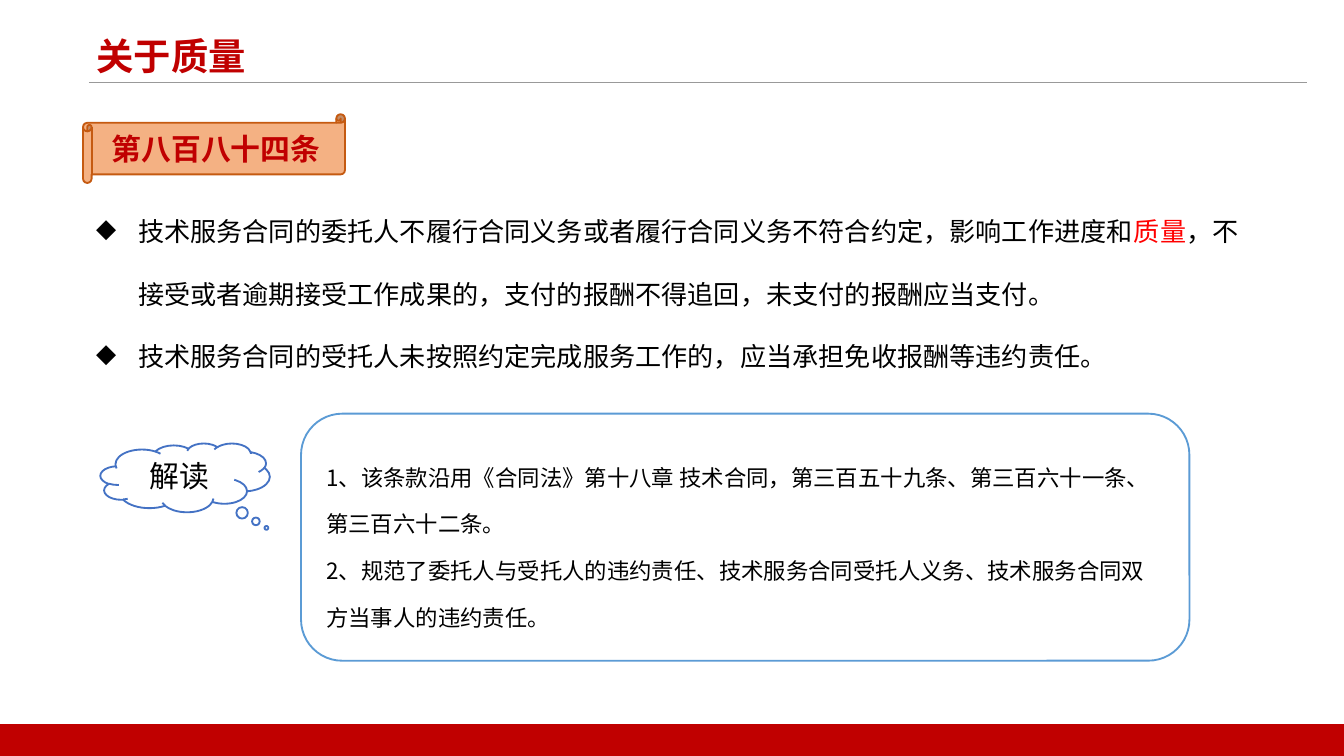
import pptx
import pptx.dml.color
import pptx.enum.shapes
import pptx.enum.text
import pptx.oxml.ns
import pptx.util
from lxml import etree
from pptx.util import Cm

SHAPE = pptx.enum.shapes.MSO_SHAPE
ALIGN = pptx.enum.text.PP_ALIGN
ANCHOR = pptx.enum.text.MSO_ANCHOR
qn = pptx.oxml.ns.qn

RED, BLACK, WHITE = "C00000", "000000", "FFFFFF"


def colour(value):
    return pptx.dml.color.RGBColor.from_string(value)


class SlideBuilder:
    font = "Noto Sans CJK SC"

    def __init__(self, deck):
        self.page = deck.slides.add_slide(deck.slide_layouts[6])
        fill = self.page.background.fill
        fill.solid()
        fill.fore_color.rgb = colour(WHITE)

    def add_span(self, para, text, size, ink=BLACK, bold=False):
        span = para.add_run()
        span.text = text
        span.font.size = pptx.util.Pt(size)
        span.font.bold = bold
        span.font.color.rgb = colour(ink)
        span.font.name = self.font
        latin = span.font._element.find(qn("a:latin"))
        east_asian = etree.Element(qn("a:ea"), typeface=self.font)
        latin.addnext(east_asian)

    def paragraphs(self, box, count):
        """Return the first count paragraphs, adding those that are missing."""
        frame = box.text_frame
        while len(frame.paragraphs) < count:
            frame.add_paragraph()
        return frame.paragraphs

    def text_box(self, left, top, width, height):
        box = self.page.shapes.add_textbox(Cm(left), Cm(top), Cm(width), Cm(height))
        box.text_frame.word_wrap = True
        return box

    def shape(self, kind, left, top, width, height, fill=None, line=None):
        shape = self.page.shapes.add_shape(kind, Cm(left), Cm(top), Cm(width), Cm(height))
        shape.shadow.inherit = False
        if fill:
            shape.fill.solid()
            shape.fill.fore_color.rgb = colour(fill)
        else:
            shape.fill.background()
        if line:
            shape.line.color.rgb = colour(line)
            shape.line.width = pptx.util.Pt(1)
        else:
            shape.line.fill.background()
        shape.text_frame.word_wrap = True
        shape.text_frame.vertical_anchor = ANCHOR.MIDDLE
        return shape

    def label(self, shape, text, size, ink=BLACK, bold=False):
        para = shape.text_frame.paragraphs[0]
        para.alignment = ALIGN.CENTER
        self.add_span(para, text, size, ink, bold)

    def rule(self, left, right, top, ink):
        line = self.page.shapes.add_connector(
            pptx.enum.shapes.MSO_CONNECTOR.STRAIGHT, Cm(left), Cm(top), Cm(right), Cm(top))
        line.line.color.rgb = colour(ink)
        line.line.width = pptx.util.Pt(0.5)
        etree.SubElement(line._element.spPr, qn("a:effectLst"))

    def bullet(self, para, indent):
        properties = para._p.get_or_add_pPr()
        properties.set("marL", str(Cm(indent)))
        properties.set("indent", str(-Cm(indent)))
        etree.SubElement(properties, qn("a:buChar"), char="◆")


def main():
    deck = pptx.Presentation()
    deck.slide_width, deck.slide_height = Cm(25.4), Cm(14.29)
    slide = SlideBuilder(deck)

    slide.rule(1.68, 24.71, 1.55, "999999")
    title = slide.text_box(1.57, 0.51, 8.26, 1.3)
    slide.add_span(title.text_frame.paragraphs[0], "关于质量", 20, RED, True)
    slide.shape(SHAPE.RECTANGLE, 0, 13.69, 25.4, 0.6, RED)

    scroll = slide.shape(SHAPE.HORIZONTAL_SCROLL, 1.57, 2.16, 4.95, 1.3, "F4B183", "C55A11")
    slide.label(scroll, "第八百八十四条", 16, RED, True)

    clauses = [
        [("技术服务合同的委托人不履行合同义务或者履行合同义务不符合约定，影响工作进度和", BLACK),
         ("质量", "FF0000"),
         ("，不接受或者逾期接受工作成果的，支付的报酬不得追回，未支付的报酬应当支付。", BLACK)],
        [("技术服务合同的受托人未按照约定完成服务工作的，应当承担免收报酬等违约责任。", BLACK)],
    ]
    body = slide.text_box(1.57, 3.35, 22.4, 3.63)
    for para, clause in zip(slide.paragraphs(body, len(clauses)), clauses):
        para.line_spacing = 2.0
        slide.bullet(para, 0.79)
        for text, ink in clause:
            slide.add_span(para, text, 14, ink)

    cloud = slide.shape(SHAPE.CLOUD_CALLOUT, 1.9, 8.38, 3.2, 1.3, WHITE, "4472C4")
    cloud.adjustments[0], cloud.adjustments[1] = 0.48, 0.73
    slide.label(cloud, "解读", 16)

    notes = [
        "1、该条款沿用《合同法》第十八章 技术合同，第三百五十九条、第三百六十一条、第三百六十二条。",
        "2、规范了委托人与受托人的违约责任、技术服务合同受托人义务、技术服务合同双方当事人的违约责任。",
    ]
    panel = slide.shape(SHAPE.ROUNDED_RECTANGLE, 5.69, 7.82, 16.79, 4.67, line="5B9BD5")
    for para, note in zip(slide.paragraphs(panel, len(notes)), notes):
        para.alignment = ALIGN.LEFT
        para.line_spacing = pptx.util.Pt(25)
        slide.add_span(para, note, 12)

    deck.save("out.pptx")


if __name__ == "__main__":
    main()
